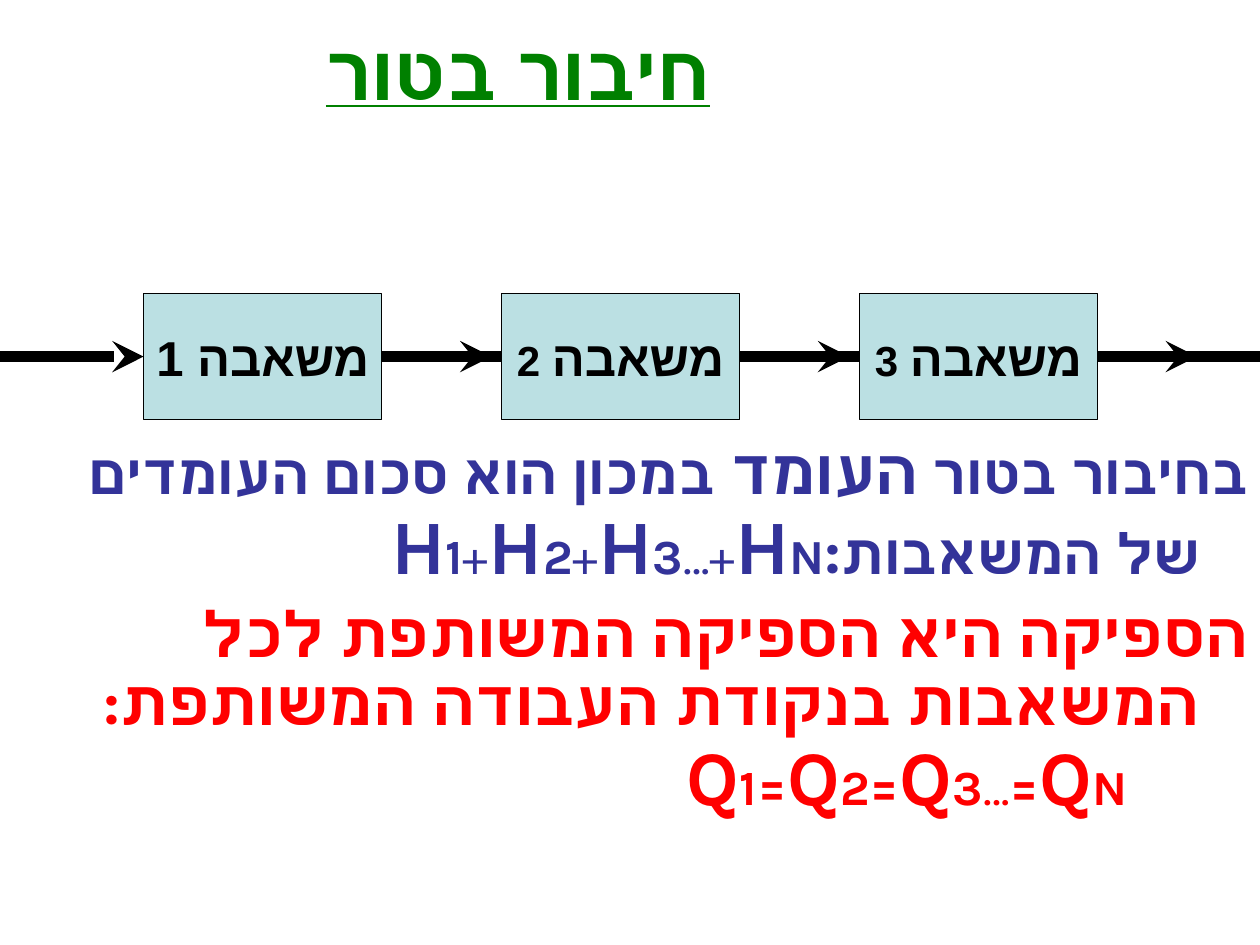
from lxml.etree import SubElement
from pptx import Presentation
from pptx.dml.color import RGBColor
from pptx.enum.shapes import MSO_CONNECTOR, MSO_SHAPE
from pptx.enum.text import MSO_ANCHOR, MSO_AUTO_SIZE, PP_ALIGN
from pptx.oxml.ns import qn
from pptx.util import Inches, Pt

BLACK = RGBColor(0x00, 0x00, 0x00)
GREEN = RGBColor(0x00, 0x80, 0x00)
INDIGO = RGBColor(0x33, 0x33, 0x99)
RED = RGBColor(0xFF, 0x00, 0x00)
PALE_BLUE = RGBColor(0xBB, 0xE0, 0xE3)

PUMP_LEFT, PUMP_TOP, PUMP_WIDTH, PUMP_HEIGHT = 1.14, 2.33, 1.89, 1
PUMP_PITCH = 2.84
PIPE_Y = PUMP_TOP + PUMP_HEIGHT / 2
ARROW_INSET, ARROW_LENGTH = 0.08, 0.79


def place(shape, left, top, width, height):
    shape.left, shape.top = Inches(left), Inches(top)
    shape.width, shape.height = Inches(width), Inches(height)


def add_run(paragraph, text, size, color, name="Karla", bold=True):
    run = paragraph.add_run()
    run.text = text
    font = run.font
    font.size, font.bold, font.name = Pt(size), bold, name
    font.color.rgb = color
    SubElement(run._r.get_or_add_rPr(), qn("a:cs"), typeface=name)
    return run


def set_right_to_left(paragraph, alignment):
    paragraph.alignment = alignment
    paragraph._p.get_or_add_pPr().set("rtl", "1")


def format_body(paragraph, margin, indent=0, tab=None, space_before=0):
    """Set an unbulleted right-to-left paragraph; lengths run from the right."""
    set_right_to_left(paragraph, PP_ALIGN.RIGHT)
    properties = paragraph._p.get_or_add_pPr()
    properties.set("marL", str(Inches(margin)))
    properties.set("indent", str(Inches(indent)))
    SubElement(properties, qn("a:buNone"))
    if tab is not None:
        tabs = SubElement(properties, qn("a:tabLst"))
        SubElement(tabs, qn("a:tab"), pos=str(Inches(tab)), algn="l")
    paragraph.line_spacing = 0.9
    paragraph.space_before = Pt(space_before)


def add_formula(paragraph, letter, operator, operator_size, operator_bold, color):
    for index in ("1", "2", "3", "N"):
        if index == "N":
            add_run(paragraph, "…", 28, color, bold=False)
        if index != "1":
            add_run(paragraph, operator, operator_size, color, bold=operator_bold)
        add_run(paragraph, letter, 44, color)
        add_run(paragraph, index, 28, color)


def fill_title(title):
    place(title, -0.89, 0.14, 10, 0.83)
    frame = title.text_frame
    frame.auto_size = MSO_AUTO_SIZE.NONE
    frame.vertical_anchor = MSO_ANCHOR.TOP
    paragraph = frame.paragraphs[0]
    set_right_to_left(paragraph, PP_ALIGN.CENTER)
    add_run(paragraph, "חיבור בטור", 44, GREEN).font.underline = True


def fill_body(body):
    place(body, 0.01, 3.44, 10, 3.91)
    frame = body.text_frame
    frame.auto_size = MSO_AUTO_SIZE.NONE

    head = frame.paragraphs[0]
    format_body(head, 0.38, -0.38, tab=5.41)
    add_run(head, "בחיבור בטור ", 32, INDIGO)
    add_run(head, "העומד ", 36, INDIGO)
    add_run(head, "במכון הוא סכום העומדים של המשאבות", 32, INDIGO)
    add_run(head, ":\t", 36, INDIGO)
    add_formula(head, "H", "+", 28, False, INDIGO)

    flow = frame.add_paragraph()
    format_body(flow, 0.38, -0.38, space_before=7)
    add_run(flow, "הספיקה", 36, RED)
    add_run(flow, " ", 32, RED)
    add_run(flow, "היא הספיקה המשותפת לכל המשאבות בנקודת העבודה המשותפת:", 36, RED)

    flow_formula = frame.add_paragraph()
    format_body(flow_formula, 0.96)
    add_formula(flow_formula, "Q", "=", 32, True, RED)


def add_pump(slide, number, left, number_size):
    pump = slide.shapes.add_shape(
        MSO_SHAPE.RECTANGLE, Inches(left), Inches(PUMP_TOP),
        Inches(PUMP_WIDTH), Inches(PUMP_HEIGHT))
    pump.shadow.inherit = False
    pump.fill.solid()
    pump.fill.fore_color.rgb = PALE_BLUE
    pump.line.color.rgb = BLACK
    pump.line.width = Pt(0.75)
    frame = pump.text_frame
    frame.word_wrap = False
    frame.vertical_anchor = MSO_ANCHOR.MIDDLE
    paragraph = frame.paragraphs[0]
    set_right_to_left(paragraph, PP_ALIGN.CENTER)
    add_run(paragraph, "משאבה", 28, BLACK, "Arial")
    add_run(paragraph, f" {number}", number_size, BLACK, "Arial")
    return pump


def add_pipe(slide, start, end, arrow=False):
    pipe = slide.shapes.add_connector(
        MSO_CONNECTOR.STRAIGHT, Inches(start), Inches(PIPE_Y), Inches(end), Inches(PIPE_Y))
    pipe.line.color.rgb = BLACK
    pipe.line.width = Pt(6)
    if arrow:
        SubElement(pipe.line._get_or_add_ln(), qn("a:tailEnd"), type="stealth")
    SubElement(pipe._element.spPr, qn("a:effectLst"))
    return pipe


def add_pump_series(slide):
    lefts = [PUMP_LEFT + PUMP_PITCH * position for position in range(3)]
    pumps = [add_pump(slide, number, left, 28 if number == 1 else 24)
             for number, left in enumerate(lefts, 1)]

    inlet = add_pipe(slide, 0, PUMP_LEFT, arrow=True)
    inlet.end_connect(pumps[0], 1)
    for position, left in enumerate(lefts):
        outlet = left + PUMP_WIDTH
        is_last = position == len(lefts) - 1
        pipe = add_pipe(slide, outlet, 10 if is_last else left + PUMP_PITCH)
        pipe.begin_connect(pumps[position], 3)
        if not is_last:
            pipe.end_connect(pumps[position + 1], 1)
        arrow_start = outlet if is_last else outlet + ARROW_INSET
        arrow = add_pipe(slide, arrow_start, arrow_start + ARROW_LENGTH, arrow=True)
        if is_last:
            arrow.begin_connect(pumps[position], 3)


def main():
    presentation = Presentation()
    presentation.slide_width, presentation.slide_height = Inches(10), Inches(7.5)
    slide = presentation.slides.add_slide(presentation.slide_layouts[1])
    fill_title(slide.shapes.title)
    add_pump_series(slide)
    fill_body(slide.placeholders[1])
    presentation.save("out.pptx")


if __name__ == "__main__":
    main()
